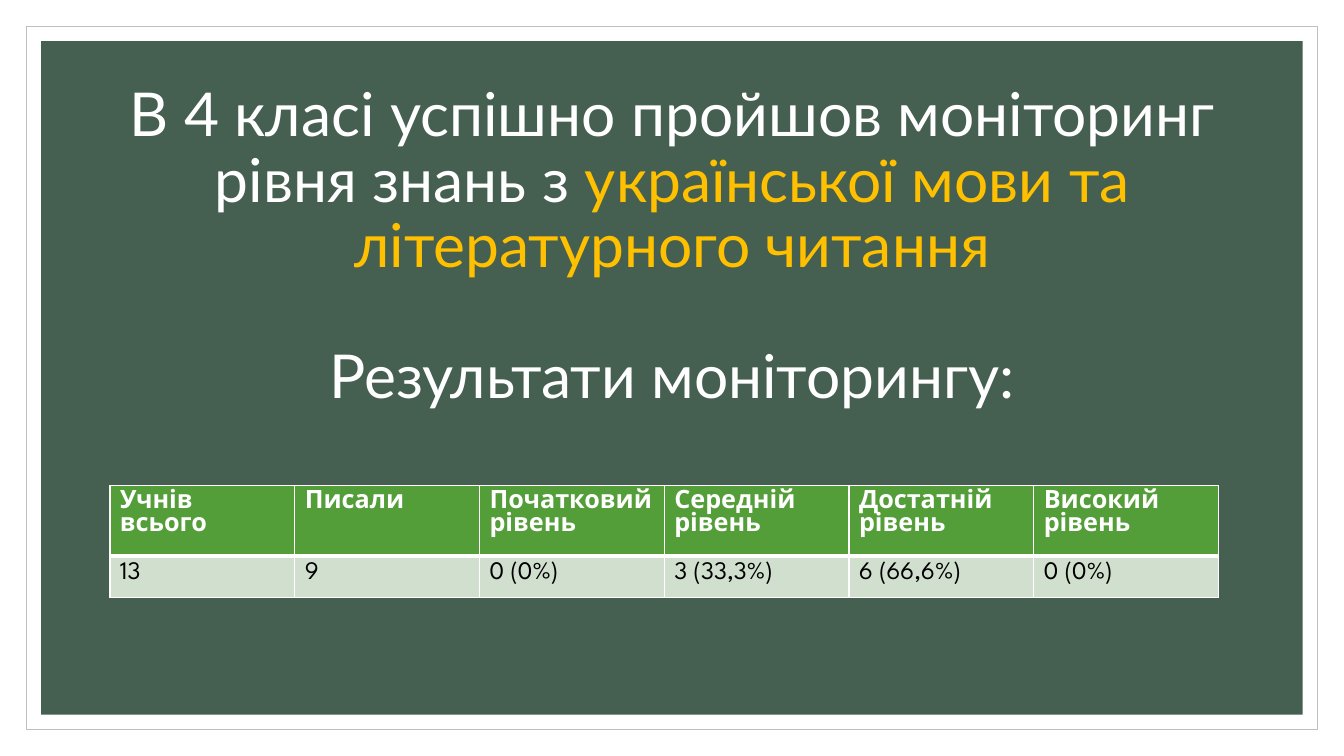
from pptx import Presentation
from pptx.dml.color import RGBColor
from pptx.enum.shapes import MSO_SHAPE
from pptx.enum.text import MSO_ANCHOR, PP_ALIGN
from pptx.oxml import parse_xml
from pptx.oxml.ns import nsdecls
from pptx.util import Cm, Pt

WIDE, HIGH = 33.87, 19.05
COLORS = {
    "white": "FFFFFF",
    "gray": "BFBFBF",
    "board": "455F51",
    "gold": "FFC000",
    "head": "549E39",
    "pale": "D1DFCE",
    "black": "000000",
}
TITLE = [
    [("В 4 класі успішно пройшов моніторинг рівня знань з ", "white"),
     ("української мови та літературного читання", "gold")],
    [("Результати моніторингу:", "white")],
]
ROWS = [
    ["Учнів всього", "Писали", "Початковий рівень", "Середній рівень",
     "Достатній рівень", "Високий рівень"],
    ["13", "9", "0 (0%)", "3 (33,3%)", "6 (66,6%)", "0 (0%)"],
]


def color(name):
    return RGBColor.from_string(COLORS[name])


def add_frame(slide, inset, fill, line=None):
    frame = slide.shapes.add_shape(
        MSO_SHAPE.RECTANGLE, Cm(inset), Cm(inset),
        Cm(WIDE - 2 * inset), Cm(HIGH - 2 * inset))
    frame.shadow.inherit = False
    frame.fill.solid()
    frame.fill.fore_color.rgb = color(fill)
    if line:
        frame.line.color.rgb = color(line)
        frame.line.width = Pt(0.5)
    else:
        frame.line.fill.background()


def add_run(para, text, size, font, tint, bold=False):
    run = para.add_run()
    run.text = text
    run.font.size = Pt(size)
    run.font.name = font
    run.font.bold = bold
    run.font.color.rgb = color(tint)


def add_title(slide):
    box = slide.shapes.add_textbox(Cm(2.97), Cm(2.13), Cm(27.94), Cm(8.23))
    frame = box.text_frame
    frame.word_wrap = True
    frame.margin_top = frame.margin_bottom = 0
    frame.vertical_anchor = MSO_ANCHOR.TOP
    for index, parts in enumerate(TITLE):
        para = frame.add_paragraph() if index else frame.paragraphs[0]
        para.alignment = PP_ALIGN.CENTER
        para.line_spacing = 0.9
        para.space_before = Pt(46.7 if index else 0)
        for text, tint in parts:
            add_run(para, text, 43.2, "Lato", tint)


def add_edge(cell, side, width):
    cell._tc.get_or_add_tcPr().append(parse_xml(
        f'<a:ln{side} {nsdecls("a")} w="{Pt(width)}"><a:solidFill>'
        f'<a:srgbClr val="{COLORS["white"]}"/></a:solidFill></a:ln{side}>'))


def add_grid(slide):
    count = len(ROWS[0])
    table = slide.shapes.add_table(
        len(ROWS), count, Cm(2.77), Cm(12.24), Cm(27.94), Cm(2.08)).table
    for column in table.columns:
        column.width = Cm(27.94 / count)
    for index, texts in enumerate(ROWS):
        head = index == 0
        table.rows[index].height = Cm(1.04)
        for place, text in enumerate(texts):
            cell = table.cell(index, place)
            thick = "B" if head else "T"
            for side in "LRTB":
                add_edge(cell, side, 3 if side == thick else 1)
            cell.fill.solid()
            cell.fill.fore_color.rgb = color("head" if head else "pale")
            add_run(cell.text_frame.paragraphs[0], text, 18,
                    "League Spartan", "white" if head else "black", head)


def main():
    deck = Presentation()
    deck.slide_width, deck.slide_height = Cm(WIDE), Cm(HIGH)
    slide = deck.slides.add_slide(deck.slide_layouts[6])
    add_frame(slide, 0.66, "white", "gray")
    add_frame(slide, 1.04, "board")
    add_title(slide)
    add_grid(slide)
    deck.save("out.pptx")


if __name__ == "__main__":
    main()
